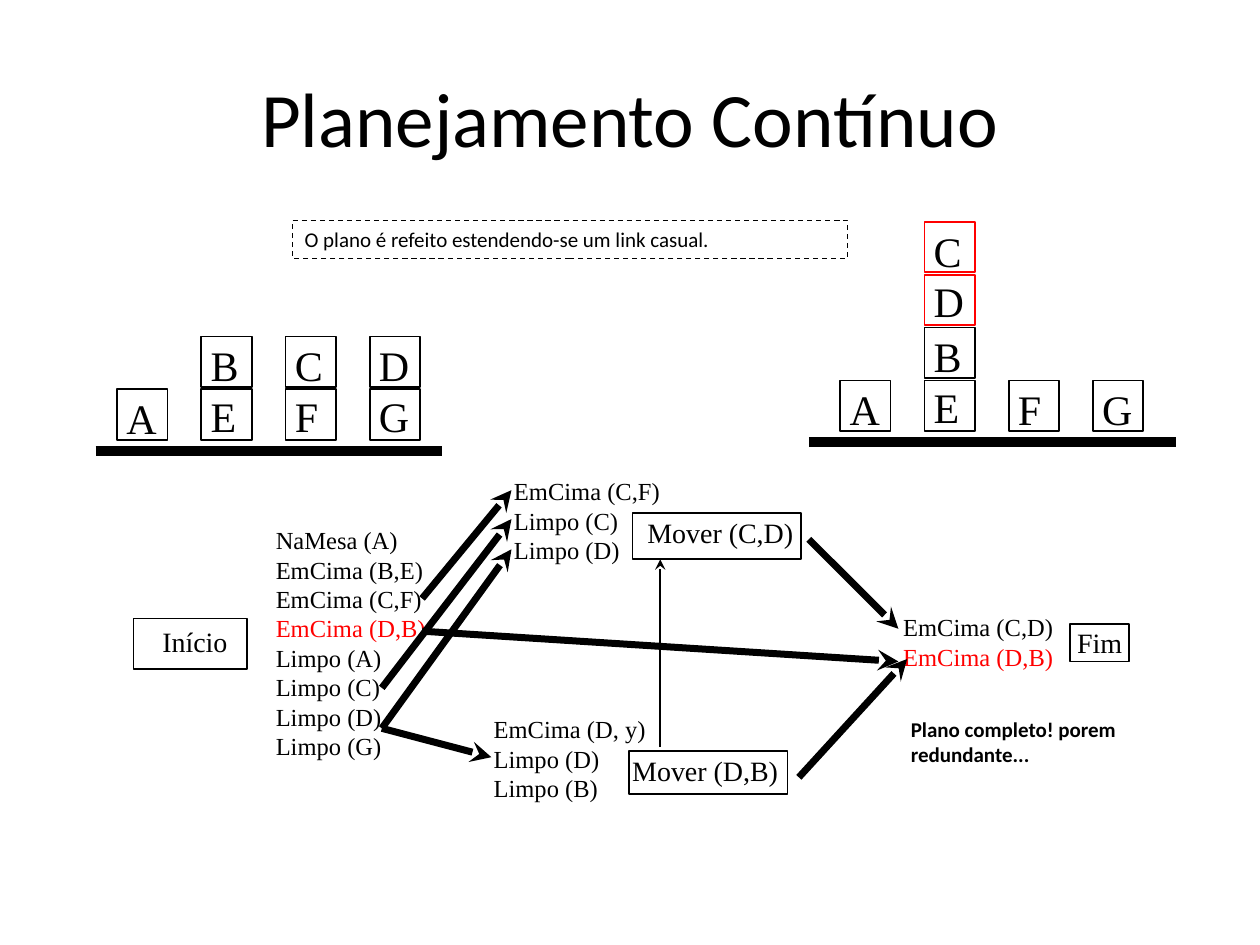
from lxml import etree
from pptx import Presentation
from pptx import util as u
from pptx.dml import color
from pptx.enum import dml, shapes, text
from pptx.oxml import ns

hue = color.RGBColor.from_string
BLACK, RED = "000000", "FF0000"

deck = Presentation()
deck.slide_width, deck.slide_height = u.Pt(720), u.Pt(540)
slide = deck.slides.add_slide(deck.slide_layouts[6])


def write(words, x, y, w, h, size=14, font="Times New Roman", bold=False,
          mid=False, red=None, dash=False):
    """Add a text box, one paragraph a line; the line equal to red is red."""
    box = slide.shapes.add_textbox(*map(u.Pt, (x, y, w, h)))
    if dash:
        box.line.color.rgb = hue(BLACK)
        box.line.width = u.Pt(0.75)
        box.line.dash_style = dml.MSO_LINE.DASH
    frame = box.text_frame
    frame.word_wrap = True
    frame.vertical_anchor = text.MSO_ANCHOR.MIDDLE if mid else text.MSO_ANCHOR.TOP
    frame.text = words
    for para in frame.paragraphs:
        para.alignment = text.PP_ALIGN.CENTER if mid else text.PP_ALIGN.LEFT
        para.font.size, para.font.name, para.font.bold = u.Pt(size), font, bold
        para.font.color.rgb = hue(RED if para.text == red else BLACK)


write("Planejamento Contínuo", 36, 21.6, 648, 90, size=44, font="Calibri", mid=True)
write("O plano é refeito estendendo-se um link casual.", 167, 126, 317.5, 21.6,
      size=12, font="Calibri", dash=True)
write("Plano completo! porem redundante...", 513.4, 406, 164, 36,
      size=12, font="Calibri", bold=True)

# Plan steps: label place, then frame
steps = [
    ("Início", 85.7, 353.5, 76.3, 353.5, 64.8, 28.8),
    ("Mover (C,D)", 362.9, 290.9, 361.4, 293, 96.5, 26.6),
    ("Mover (D,B)", 354.2, 427, 359.3, 429.1, 90.7, 24.5),
    ("Fim", 608.4, 354.2, 611.3, 356.4, 33.8, 21.6),
]
frames = []
for name, x, y, *frame in steps:
    write(name, x, y, 110, 26.6, size=16)
    frames.append((*frame, BLACK))

# Conditions of each step
facts = [
    (150.5, 296.6, 143.3, ["NaMesa (A)", "EmCima (B,E)", "EmCima (C,F)", "EmCima (D,B)",
                           "Limpo (A)", "Limpo (C)", "Limpo (D)", "Limpo (G)"]),
    (275, 404.6, 58.3, ["EmCima (D, y)", "Limpo (D)", "Limpo (B)"]),
    (286.6, 268.6, 58.3, ["EmCima (C,F)", "Limpo (C)", "Limpo (D)"]),
    (509, 346.3, 41, ["EmCima (C,D)", "EmCima (D,B)"]),
]
for x, y, h, lines in facts:
    write("\n".join(lines), x, y, 110, h, red="EmCima (D,B)")

# Block piles: first column, floor row, then column, level of top block, letters
SIDE, STEP, RISE = 28.8, 48.1, 30.2
worlds = [
    (67, 222.5, [(0, 0, "A", BLACK), (1, 1, "BE", BLACK),
                 (2, 1, "CF", BLACK), (3, 1, "DG", BLACK)]),
    (480.2, 217.4, [(0, 0, "A", BLACK), (1, 3, "CD", RED), (1, 1, "BE", BLACK),
                    (2, 0, "F", BLACK), (3, 0, "G", BLACK)]),
]
for left, floor, piles in worlds:
    for col, level, names, tint in piles:
        x, y = left + col * STEP, floor - level * RISE
        write("\n".join(names), x - 1.8, y - 1.6, 36, 8 + 28 * len(names), size=24)
        for row in range(len(names)):
            frames.append((x, y + row * RISE, SIDE, SIDE, tint))

for *place, tint in frames:
    box = slide.shapes.add_shape(shapes.MSO_SHAPE.RECTANGLE, *map(u.Pt, place))
    box.shadow.inherit = False
    box.fill.background()
    box.line.color.rgb = hue(tint)
    box.line.width = u.Pt(1)

# Floors and links: start, end, width, arrowhead
links = [
    (54.7, 257.8, 252.7, 257.8, 6, False),
    (462.2, 252.7, 671.8, 252.7, 6, False),
    (241.2, 342, 292.3, 280.1, 4, True),
    (218.2, 393.1, 292.3, 296.6, 4, True),
    (218.2, 416.2, 292.3, 313.9, 4, True),
    (218.2, 416.2, 280.8, 432.7, 4, True),
    (377.3, 427, 377.3, 319.7, 1, True),
    (462.2, 308.2, 513.4, 359.3, 4, True),
    (456.5, 444.2, 518.4, 376.6, 4, True),
    (241.2, 360.7, 513.4, 378, 4, True),
]
for *ends, width, head in links:
    link = slide.shapes.add_connector(shapes.MSO_CONNECTOR.STRAIGHT, *map(u.Pt, ends))
    link.line.color.rgb = hue(BLACK)
    link.line.width = u.Pt(width)
    if head:
        etree.SubElement(link.line._get_or_add_ln(), ns.qn("a:tailEnd"), type="stealth")
    etree.SubElement(link._element.spPr, ns.qn("a:effectLst"))

deck.save("out.pptx")
